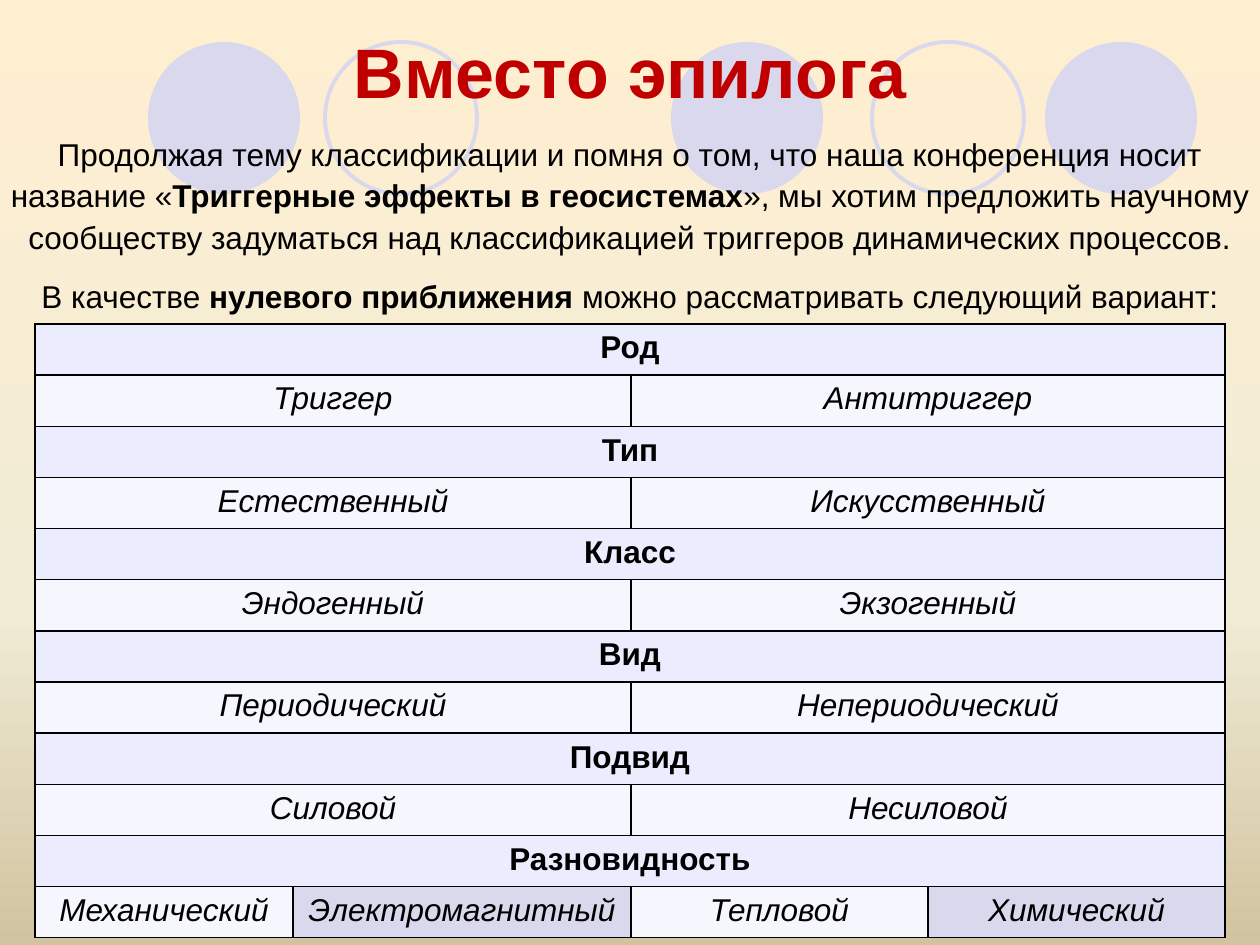
"""Build the closing slide with a proposed classification of triggers."""
import copy

import pptx
import pptx.dml.color
import pptx.enum.shapes
import pptx.enum.text
import pptx.oxml
import pptx.oxml.ns
import pptx.util

RGB = pptx.dml.color.RGBColor
BLACK = RGB(0x00, 0x00, 0x00)
RED = RGB(0xC0, 0x00, 0x00)
LILAC = RGB(0xD9, 0xD8, 0xEC)
HEAD = RGB(0xEC, 0xEC, 0xFF)
PALE = RGB(0xF6, 0xF6, 0xFF)
SKY = [(0, RGB(0xFF, 0xEF, 0xD1)), (0.65, RGB(0xF0, 0xEB, 0xD5)), (1, RGB(0xD1, 0xC3, 0x9F))]

DISCS = [148, 671, 1045]
RINGS = [325, 872]
INTRO = [
    [
        ("Продолжая тему классификации и помня о том, что наша конференция носит название «", False),
        ("Триггерные эффекты в геосистемах", True),
        ("», мы хотим предложить научному сообществу задуматься над классификацией "
         "триггеров динамических процессов.", False),
    ],
    [
        ("В качестве ", False),
        ("нулевого приближения ", True),
        ("можно рассматривать следующий вариант:", False),
    ],
]
COLS = [258, 338, 297, 297]
RANKS = [
    ("Род", ["Триггер", "Антитриггер"]),
    ("Тип", ["Естественный", "Искусственный"]),
    ("Класс", ["Эндогенный", "Экзогенный"]),
    ("Вид", ["Периодический", "Непериодический"]),
    ("Подвид", ["Силовой", "Несиловой"]),
    ("Разновидность", ["Механический", "Электромагнитный", "Тепловой", "Химический"]),
]


def px(num):
    return pptx.util.Emu(round(num * 914400 / 126))


def put(para, text, size=18, color=BLACK, bold=False, italic=False):
    para.alignment = pptx.enum.text.PP_ALIGN.CENTER
    run = para.add_run()
    run.text = text
    font = run.font
    font.name = "Arial"
    font.size = pptx.util.Pt(size)
    font.bold = bold
    font.italic = italic
    font.color.rgb = color


class Deck:
    def __init__(self):
        self.file = pptx.Presentation()
        self.file.slide_width = px(1260)
        self.file.slide_height = px(945)
        self.slide = self.file.slides.add_slide(self.file.slide_layouts[5])
        self.shapes = self.slide.shapes

    def back(self, stops):
        fill = self.slide.background.fill
        fill.gradient()
        fill.gradient_angle = 270
        first = fill.gradient_stops[0]._gs
        first.getparent().append(copy.deepcopy(first))
        for stop, (place, color) in zip(fill.gradient_stops, stops):
            stop.position = place
            stop.color.rgb = color

    def disc(self, left, solid):
        oval = pptx.enum.shapes.MSO_SHAPE.OVAL
        shape = self.shapes.add_shape(oval, px(left), px(42), px(152), px(152))
        shape.shadow.inherit = False
        if solid:
            shape.fill.solid()
            shape.fill.fore_color.rgb = LILAC
            shape.line.fill.background()
        else:
            shape.fill.background()
            shape.line.color.rgb = LILAC
            shape.line.width = pptx.util.Pt(2.25)

    def title(self, text, left, top, width, height):
        shape = self.shapes.title
        shape.left, shape.top = px(left), px(top)
        shape.width, shape.height = px(width), px(height)
        frame = shape.text_frame
        frame.vertical_anchor = pptx.enum.text.MSO_ANCHOR.MIDDLE
        put(frame.paragraphs[0], text, size=40, color=RED, bold=True)
        self.shapes._spTree.append(shape._element)

    def prose(self, paras, left, top, width, height):
        box = self.shapes.add_textbox(px(left), px(top), px(width), px(height))
        frame = box.text_frame
        frame.word_wrap = True
        frame.auto_size = pptx.enum.text.MSO_AUTO_SIZE.SHAPE_TO_FIT_TEXT
        for num, runs in enumerate(paras):
            para = frame.add_paragraph() if num else frame.paragraphs[0]
            para.line_spacing = 1.1
            if num:
                para.space_before = pptx.util.Pt(10)
            for text, bold in runs:
                put(para, text, bold=bold)

    def cell(self, cell, color):
        props = cell._tc.get_or_add_tcPr()
        for side in "LRTB":
            props.append(pptx.oxml.parse_xml(
                f'<a:ln{side} {pptx.oxml.ns.nsdecls("a")} w="12700"><a:solidFill>'
                f'<a:srgbClr val="{BLACK}"/></a:solidFill></a:ln{side}>'))
        cell.fill.solid()
        cell.fill.fore_color.rgb = color

    def row(self, grid, row, texts, **fmt):
        span = len(COLS) // len(texts)
        for num, text in enumerate(texts):
            start = num * span
            if span > 1:
                grid.cell(row, start).merge(grid.cell(row, start + span - 1))
            put(grid.cell(row, start).text_frame.paragraphs[0], text, **fmt)

    def table(self, ranks, left, top, height):
        frame = self.shapes.add_table(
            2 * len(ranks), len(COLS), px(left), px(top), px(sum(COLS)), px(height))
        grid = frame.table
        for col, width in zip(grid.columns, COLS):
            col.width = px(width)
        for num, (head, kinds) in enumerate(ranks):
            self.row(grid, 2 * num, [head], bold=True)
            self.row(grid, 2 * num + 1, kinds, italic=True)
            split = len(kinds) == len(COLS)
            for col in range(len(COLS)):
                self.cell(grid.cell(2 * num, col), HEAD)
                self.cell(grid.cell(2 * num + 1, col), LILAC if split and col % 2 else PALE)


def main():
    deck = Deck()
    deck.back(SKY)
    for left in DISCS + RINGS:
        deck.disc(left, left in DISCS)
    deck.title("Вместо эпилога", 63, 16, 1134, 108)
    deck.prose(INTRO, -15, 125, 1290, 199)
    deck.table(RANKS, 35, 324, 614)
    deck.file.save("out.pptx")


if __name__ == "__main__":
    main()
